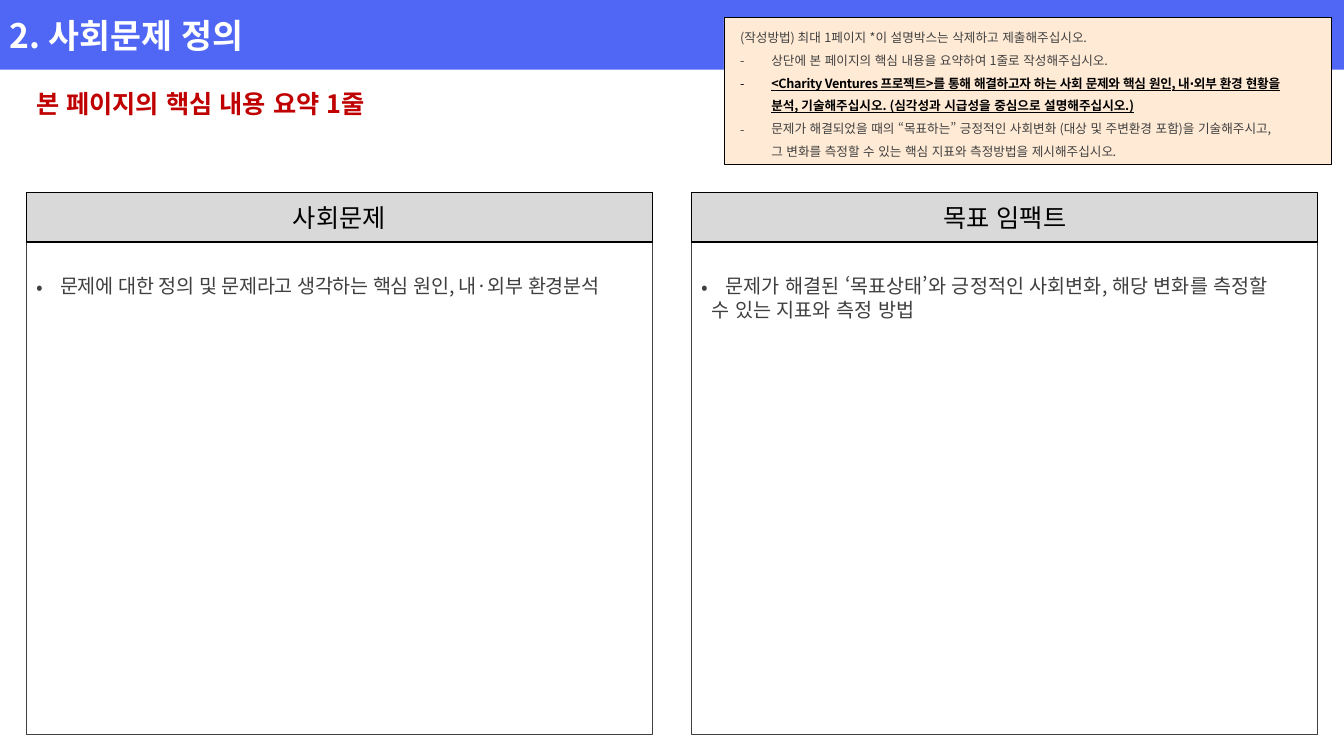
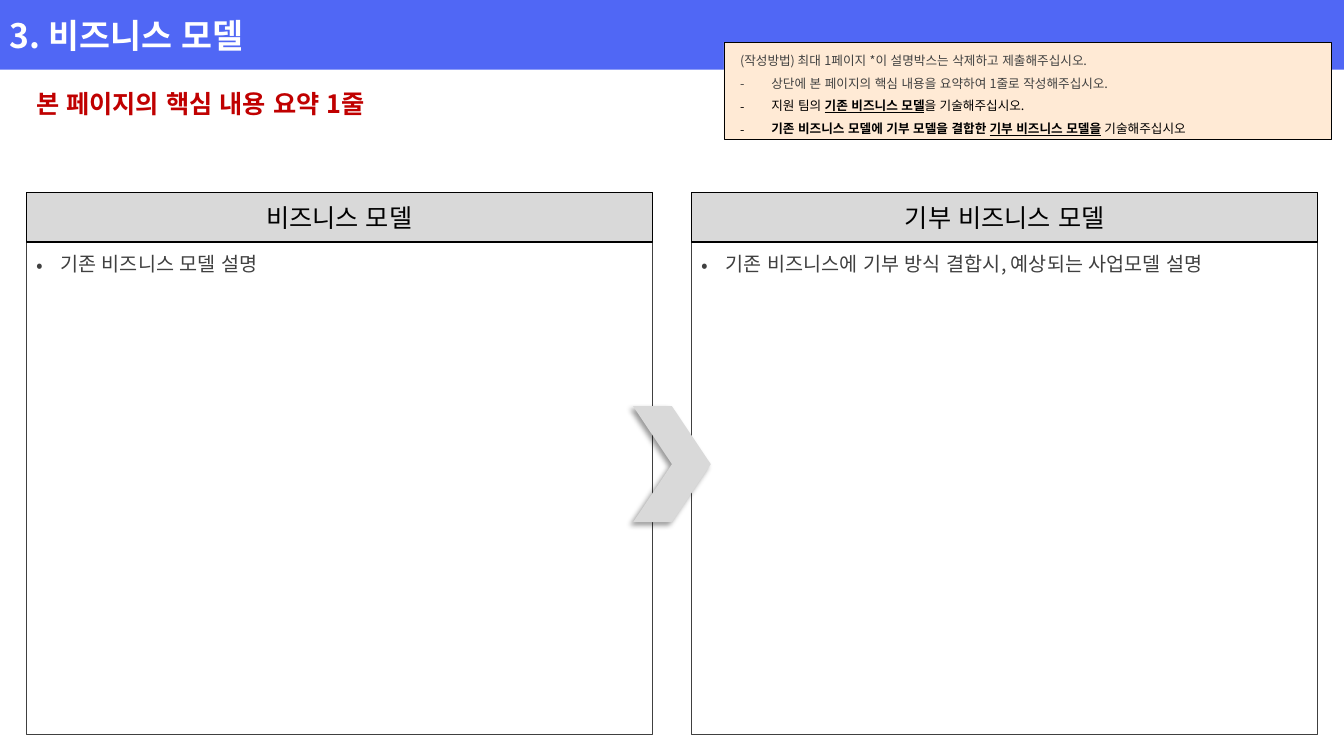
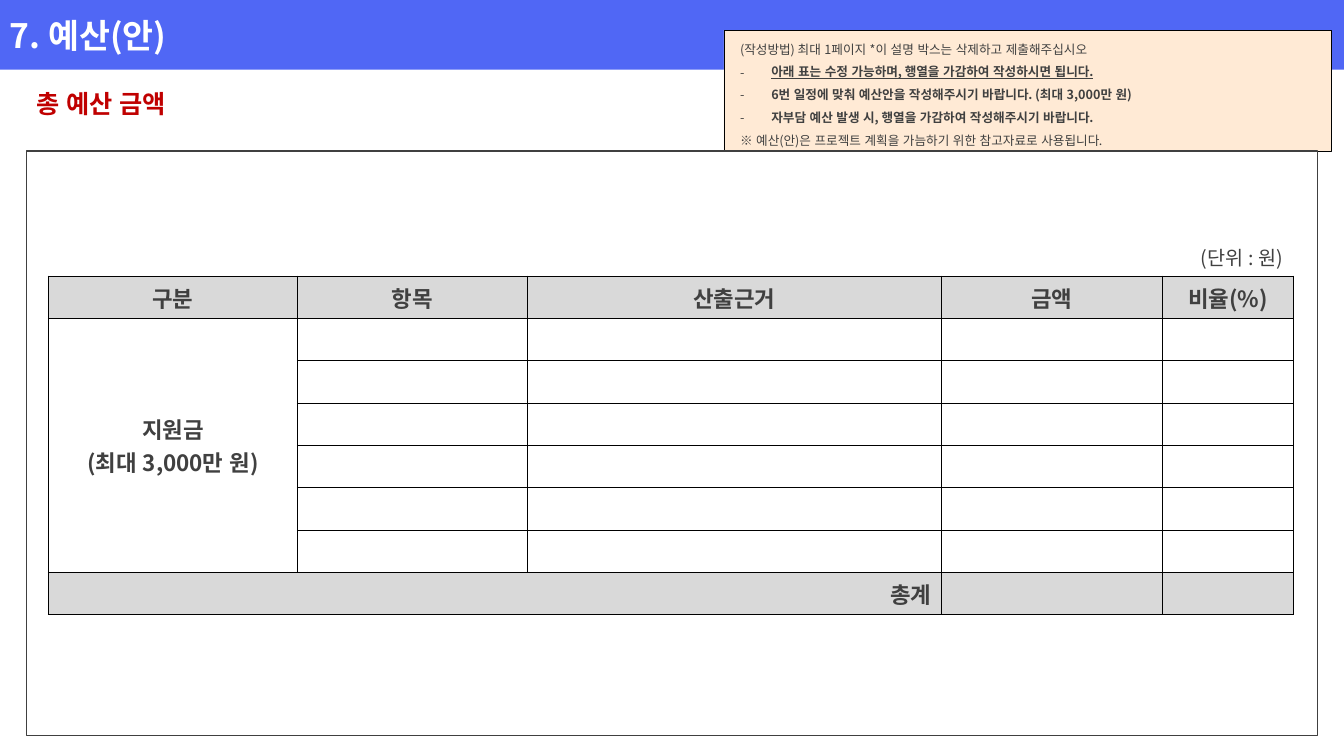
"""Build three proposal template slides: problem definition, business model and budget."""
from copy import deepcopy

from lxml import etree
from pptx import Presentation
from pptx.dml.color import RGBColor
from pptx.enum import lang, shapes, text
from pptx.oxml import ns
from pptx.util import Inches, Pt

FONT = "Noto Sans CJK KR"
BLUE, PEACH, GRAY = "5067F5", "FFEAD5", "D9D9D9"
WHITE, BLACK, DARK, RED = "FFFFFF", "000000", "404040", "C00000"
LEFT, RIGHT, PANEL, FULL = 0.26, 6.86, 6.21, 12.81
RECT = shapes.MSO_SHAPE.RECTANGLE
MIDDLE = text.MSO_ANCHOR.MIDDLE
CENTER, JUSTIFY, END = text.PP_ALIGN.CENTER, text.PP_ALIGN.JUSTIFY, text.PP_ALIGN.RIGHT
rgb = RGBColor.from_string


def box(slide, at, fill=None, line=None, weight=1, preset=RECT):
    shape = slide.shapes.add_shape(preset, *map(Inches, at))
    shape.shadow.inherit = False
    if fill:
        shape.fill.solid()
        shape.fill.fore_color.rgb = rgb(fill)
    else:
        shape.fill.background()
    if line:
        shape.line.color.rgb = rgb(line)
        shape.line.width = Pt(weight)
    else:
        shape.line.fill.background()
    return shape


def write(frame, paragraphs, size, color, bold=False, align=text.PP_ALIGN.LEFT,
          spacing=None):
    """Write (bullet, indent, runs) paragraphs; a run is (words, style)."""
    for i, (bullet, indent, runs) in enumerate(paragraphs):
        paragraph = frame.paragraphs[0] if i == 0 else frame.add_paragraph()
        paragraph.alignment = align
        if spacing:
            paragraph.line_spacing = spacing
        props = paragraph._p.get_or_add_pPr()
        props.set("marL", str(Inches(indent)))
        props.set("hangingPunct", "0")
        if bullet:
            props.set("indent", str(-Inches(indent)))
            etree.SubElement(props, ns.qn("a:buFont"), typeface=FONT)
            etree.SubElement(props, ns.qn("a:buChar"), char=bullet)
        for words, style in runs:
            for j, piece in enumerate(words.split("\n")):
                if j:
                    paragraph.add_line_break()
                run = paragraph.add_run()
                run.text = piece
                run.font.size = Pt(size)
                run.font.name = FONT
                run.font.language_id = lang.MSO_LANGUAGE_ID.KOREAN
                run.font.bold = style.get("bold", bold)
                run.font.underline = style.get("underline", False)
                run.font.color.rgb = rgb(style.get("color", color))
                mark = run._r.get_or_add_rPr()
                etree.SubElement(mark, ns.qn("a:ea"), typeface=FONT)
                if "tracking" in style:
                    mark.set("spc", str(style["tracking"]))
        for line_break in paragraph._p.findall(ns.qn("a:br")):
            line_break.insert(0, deepcopy(mark))


PLAIN, INK, STRONG = {}, {"color": BLACK}, {"bold": True}
INK_BOLD = {"color": BLACK, "bold": True}
INK_LINE = {"color": BLACK, "bold": True, "underline": True}
SUMMARY = "본 페이지의 핵심 내용 요약 1줄"
INTRO = ("", 0, [("(작성방법) 최대 1페이지 *이 설명박스는 삭제하고 제출해주십시오.", PLAIN)])
SUMMARY_TIP = ("-", 0.31, [("상단에 본 페이지의 핵심 내용을 요약하여 1줄로 작성해주십시오.", PLAIN)])

pages = [
    {
        "title": "2. 사회문제 정의", "summary": SUMMARY, "note": (0.17, 1.46),
        "tips": [
            INTRO, SUMMARY_TIP,
            ("-", 0.31, [
                ("<Charity Ventures 프로젝트>를 통해 해결하고자 하는 사회 문제와 핵심 원인, 내∙외부 환경 현황을",
                 {**INK_LINE, "tracking": -20}),
                ("\n분석, 기술해주십시오. (심각성과 시급성을 중심으로 설명해주십시오.)", INK_LINE)]),
            ("-", 0.31, [
                ("문제가 해결되었을 때의 “목표하는” 긍정적인 사회변화 (대상 및 주변환경 포함)을 기술해주시고,\n"
                 "그 변화를 측정할 수 있는 핵심 지표와 측정방법을 제시해주십시오.", PLAIN)]),
        ],
        "body_top": 2.67,
        "panels": [
            ("사회문제", [("•", 0.24, [
                ("문제에 대한 정의 및 문제라고 생각하는 핵심 원인, 내·외부 환경분석", {"tracking": -30})])]),
            ("목표 임팩트", [
                ("•", 0.24, [("문제가 해결된 ‘목표상태’와 긍정적인 사회변화, 해당 변화를 측정할", PLAIN)]),
                ("", 0.1, [("수 있는 지표와 측정 방법", PLAIN)])]),
        ],
    },
    {
        "title": "3. 비즈니스 모델", "summary": SUMMARY, "note": (0.42, 0.96),
        "tips": [
            INTRO, SUMMARY_TIP,
            ("-", 0.31, [("지원 팀의 ", INK), ("기존 비즈니스 모델", INK_LINE),
                         ("을 기술해주십시오.", INK)]),
            ("-", 0.31, [("기존 비즈니스 모델에 기부 모델을 결합한 ", INK_BOLD),
                         ("기부 비즈니스 모델을", INK_LINE), (" 기술해주십시오", INK)]),
        ],
        "body_top": 2.45,
        "panels": [
            ("비즈니스 모델", [("•", 0.24, [("기존 비즈니스 모델 설명", PLAIN)])]),
            ("기부 비즈니스 모델", [("•", 0.24, [
                ("기존 비즈니스에 기부 방식 결합시, 예상되는 사업모델 설명", PLAIN)])]),
        ],
    },
    {
        "title": "7. 예산(안)", "summary": "총 예산 금액", "note": (0.3, 1.2),
        "tips": [
            ("", 0, [("(작성방법) 최대 1페이지 *이 설명 박스는 삭제하고 제출해주십시오", PLAIN)]),
            ("-", 0.31, [("아래 표는 수정 가능하며, 행열을 가감하여 작성하시면 됩니다.",
                          {"bold": True, "underline": True})]),
            ("-", 0.31, [("6번 일정에 맞춰 예산안을 작성해주시기 바랍니다. (최대 3,000만 원)", STRONG)]),
            ("-", 0.31, [("자부담 예산 발생 시, 행열을 가감하여 작성해주시기 바랍니다.", STRONG)]),
            ("", 0, [("※ 예산(안)은 프로젝트 계획을 가늠하기 위한 참고자료로 사용됩니다.", PLAIN)]),
        ],
        "panels": [],
    },
]

prs = Presentation()
prs.slide_width, prs.slide_height = Inches(13.33), Inches(7.5)

for page in pages:
    slide = prs.slides.add_slide(prs.slide_layouts[6])
    band = box(slide, (0, 0, 13.33, 0.69), BLUE).text_frame
    band.vertical_anchor = MIDDLE
    write(band, [("", 0, [(page["title"], PLAIN)])], 24, WHITE, bold=True)

    note_top, note_height = page["note"]
    note = box(slide, (7.18, note_top, 6.02, note_height), PEACH, BLACK, 0.25).text_frame
    note.vertical_anchor = MIDDLE
    note.margin_left = Inches(0.16)
    write(note, page["tips"], 9, DARK, spacing=1.5)

    summary = slide.shapes.add_textbox(
        Inches(LEFT), Inches(0.69), Inches(FULL), Inches(0.53)).text_frame
    summary.word_wrap = True
    summary.vertical_anchor = MIDDLE
    write(summary, [("", 0, [(page["summary"], PLAIN)])], 18, RED, bold=True, spacing=1.5)

    for left, (heading, body) in zip((LEFT, RIGHT), page["panels"]):
        box(slide, (left, 1.91, PANEL, 5.38), line=DARK)
        header = box(slide, (left, 1.91, PANEL, 0.49), GRAY, BLACK).text_frame
        header.vertical_anchor = MIDDLE
        write(header, [("", 0, [(heading, PLAIN)])], 18, BLACK, align=CENTER)
        content = slide.shapes.add_textbox(
            Inches(left), Inches(page["body_top"]), Inches(PANEL),
            Inches(0.11 + 0.23 * len(body))).text_frame
        content.word_wrap = True
        write(content, body, 14, DARK, align=JUSTIFY)

model_slide, budget_slide = prs.slides[1], prs.slides[2]

chevron = box(model_slide, (6.28, 4.03, 0.77, 1.15), GRAY, preset=shapes.MSO_SHAPE.CHEVRON)
effects = chevron._element.spPr.find(ns.qn("a:effectLst"))
shadow = etree.SubElement(effects, ns.qn("a:outerShdw"), blurRad=str(Pt(4)),
                          dist=str(Pt(3)), dir=str(135 * 60000), rotWithShape="0")
shade = etree.SubElement(shadow, ns.qn("a:srgbClr"), val=BLACK)
etree.SubElement(shade, ns.qn("a:alpha"), val="40000")

box(budget_slide, (LEFT, 1.5, FULL, 5.8), line=DARK)
widths = [2.47, 2.28, 4.11, 2.19, 1.3]
heights = [0.38] + [0.42] * 8
budget = budget_slide.shapes.add_table(
    len(heights), len(widths), Inches(0.48), Inches(2.36),
    Inches(sum(widths)), Inches(sum(heights))).table
budget.first_row = budget.horz_banding = False
for column, width in zip(budget.columns, widths):
    column.width = Inches(width)
for row, height in zip(budget.rows, heights):
    row.height = Inches(height)

labels = {(0, 0): (["(단위 : 원)"], END), (2, 0): (["지원금", "(최대 3,000만 원)"], CENTER),
          (8, 0): (["총계"], END)}
for c, name in enumerate(["구분", "항목", "산출근거", "금액", "비율(%)"]):
    labels[1, c] = ([name], CENTER)

for r in range(len(heights)):
    for c in range(len(widths)):
        cell = budget.cell(r, c)
        props = cell._tc.get_or_add_tcPr()
        for side in ("lnL", "lnR", "lnT", "lnB"):
            unit_edge = r == 0 and side != "lnB"
            edge = etree.SubElement(props, ns.qn(f"a:{side}"),
                                    w=str(Pt(1 if unit_edge else 0.75)))
            paint = etree.SubElement(edge, ns.qn("a:solidFill"))
            etree.SubElement(paint, ns.qn("a:srgbClr"), val=WHITE if unit_edge else BLACK)
        if r == 0:
            cell.fill.background()
        else:
            cell.fill.solid()
            cell.fill.fore_color.rgb = rgb(GRAY if r in (1, 8) else WHITE)
        if (r, c) in labels:
            lines, align = labels[r, c]
            write(cell.text_frame, [("", 0, [(line, PLAIN)]) for line in lines],
                  14 if r == 0 else 16, DARK, bold=r > 0, align=align)
        else:
            etree.SubElement(cell.text_frame.paragraphs[0]._p, ns.qn("a:endParaRPr"), sz="1400")

budget.cell(0, 0).merge(budget.cell(0, 4))
budget.cell(2, 0).merge(budget.cell(7, 0))
budget.cell(8, 0).merge(budget.cell(8, 2))
budget.cell(2, 0).vertical_anchor = MIDDLE

prs.save("out.pptx")
